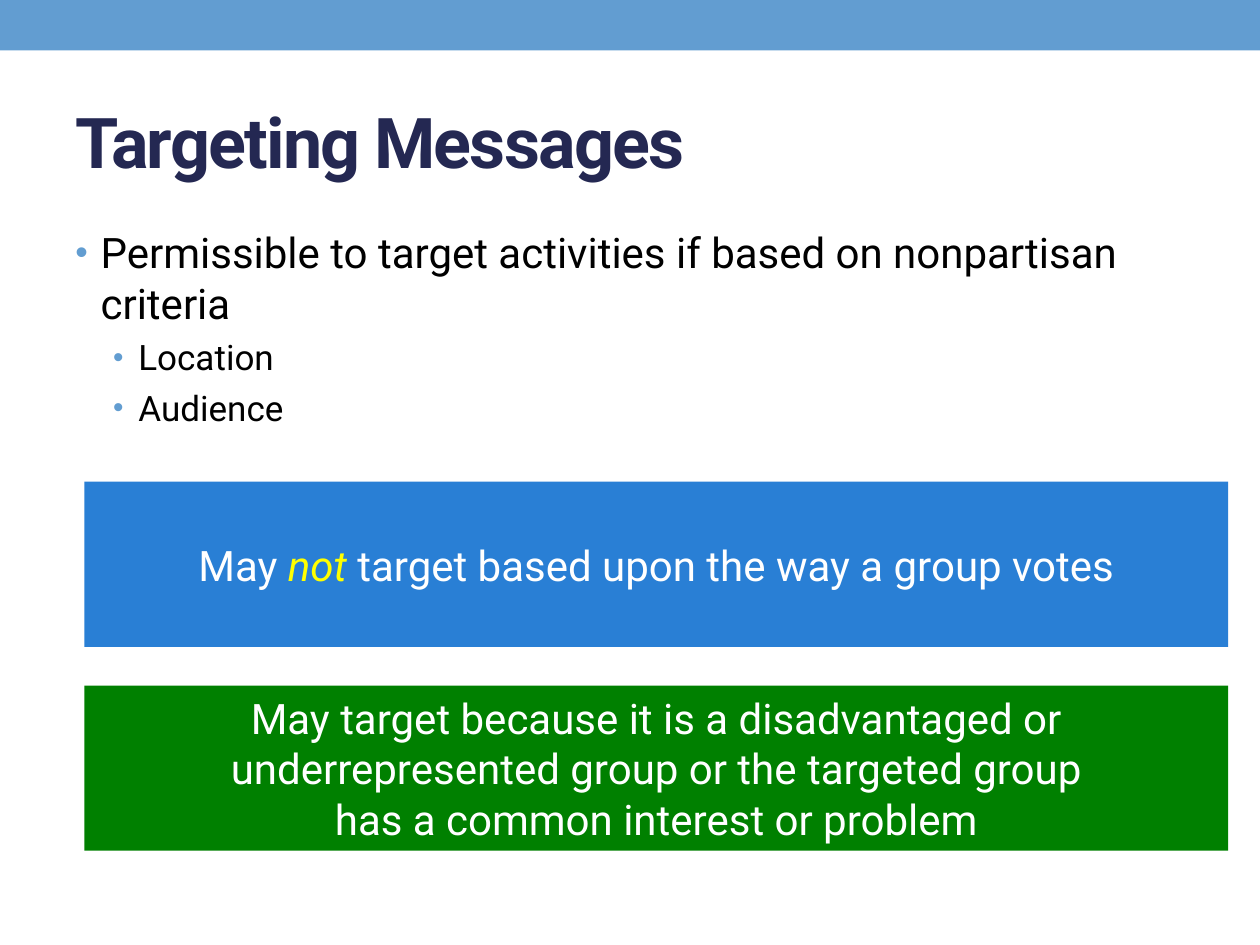
from dataclasses import dataclass

from lxml.etree import SubElement
from pptx import Presentation
from pptx.dml.color import RGBColor
from pptx.enum.shapes import MSO_SHAPE
from pptx.enum.text import MSO_ANCHOR, PP_ALIGN
from pptx.oxml.ns import qn
from pptx.util import Cm, Pt

FONT = "Roboto"
ACCENT = "629DD1"


@dataclass
class Bullet:
    text: str
    level: int
    size: int
    margin: float


@dataclass
class Banner:
    top: float
    fill: str
    spans: list[tuple[str, str, bool]]  # text, colour, italic


BULLETS = [
    Bullet("Permissible to target activities if based on nonpartisan criteria", 0, 24, 0.51),
    Bullet("Location", 1, 20, 1.27),
    Bullet("Audience", 1, 20, 1.27),
]
BANNERS = [
    Banner(9.71, "297FD5", [
        ("May ", "FFFFFF", False),
        ("not", "FFFF00", True),
        (" target based upon the way a group votes", "FFFFFF", False),
    ]),
    Banner(13.82, "008000", [
        ("May target because it is a disadvantaged or underrepresented group "
         "or the targeted group\vhas a common interest or problem", "FFFFFF", False),
    ]),
]


def rgb(colour: str) -> RGBColor:
    return RGBColor.from_string(colour)


def style(span, size: int, colour: str, bold: bool = False, italic: bool = False) -> None:
    span.font.name = FONT
    span.font.size = Pt(size)
    span.font.bold = bold
    span.font.italic = italic
    span.font.color.rgb = rgb(colour)


def add_bar(page, left: float, top: float, width: float, height: float, fill: str):
    bar = page.shapes.add_shape(MSO_SHAPE.RECTANGLE, Cm(left), Cm(top), Cm(width), Cm(height))
    bar.shadow.inherit = False
    bar.fill.solid()
    bar.fill.fore_color.rgb = rgb(fill)
    bar.line.fill.background()
    return bar


def add_text_frame(page, top: float, height: float):
    box = page.shapes.add_textbox(Cm(1.27), Cm(top), Cm(22.86), Cm(height))
    box.text_frame.word_wrap = True
    return box.text_frame


def add_title(page, text: str) -> None:
    frame = add_text_frame(page, 1.47, 2.74)
    frame.vertical_anchor = MSO_ANCHOR.MIDDLE
    frame.text = text
    for span in frame.paragraphs[0].runs:
        style(span, 40, "242852", bold=True)
        span.font._element.set("spc", "-100")


def add_bullets(page, bullets: list[Bullet]) -> None:
    frame = add_text_frame(page, 4.45, 13.54)
    frame.text = "\n".join(bullet.text for bullet in bullets)
    for index, (para, bullet) in enumerate(zip(frame.paragraphs, bullets)):
        para.level = bullet.level
        if index:
            para.space_before = Pt(4.7)
        properties = para._p.get_or_add_pPr()
        properties.set("marL", str(Cm(bullet.margin)))
        properties.set("indent", str(-Cm(0.51)))
        colour = SubElement(properties, qn("a:buClr"))
        SubElement(colour, qn("a:srgbClr"), val=ACCENT)
        SubElement(properties, qn("a:buSzPct"), val="85000")
        SubElement(properties, qn("a:buFont"), typeface="Arial")
        SubElement(properties, qn("a:buChar"), char="•")
        style(para.runs[0], bullet.size, "000000")


def add_banner(page, banner: Banner) -> None:
    frame = add_bar(page, 1.7, banner.top, 23.06, 3.33, banner.fill).text_frame
    frame.word_wrap = True
    frame.vertical_anchor = MSO_ANCHOR.MIDDLE
    para = frame.paragraphs[0]
    para.alignment = PP_ALIGN.CENTER
    for text, colour, italic in banner.spans:
        for index, line in enumerate(text.split("\v")):
            if index:
                para.add_line_break()
            span = para.add_run()
            span.text = line
            style(span, 24, colour, italic=italic)


def main() -> None:
    deck = Presentation()
    deck.slide_width, deck.slide_height = Cm(25.4), Cm(19.05)
    page = deck.slides.add_slide(deck.slide_layouts[6])

    # Top strip, heading and criteria
    add_bar(page, 0, 0, 25.4, 1.02, ACCENT)
    add_bullets(page, BULLETS)

    # What is and is not allowed
    for banner in BANNERS:
        add_banner(page, banner)
    add_title(page, "Targeting Messages")

    deck.save("out.pptx")


if __name__ == "__main__":
    main()
